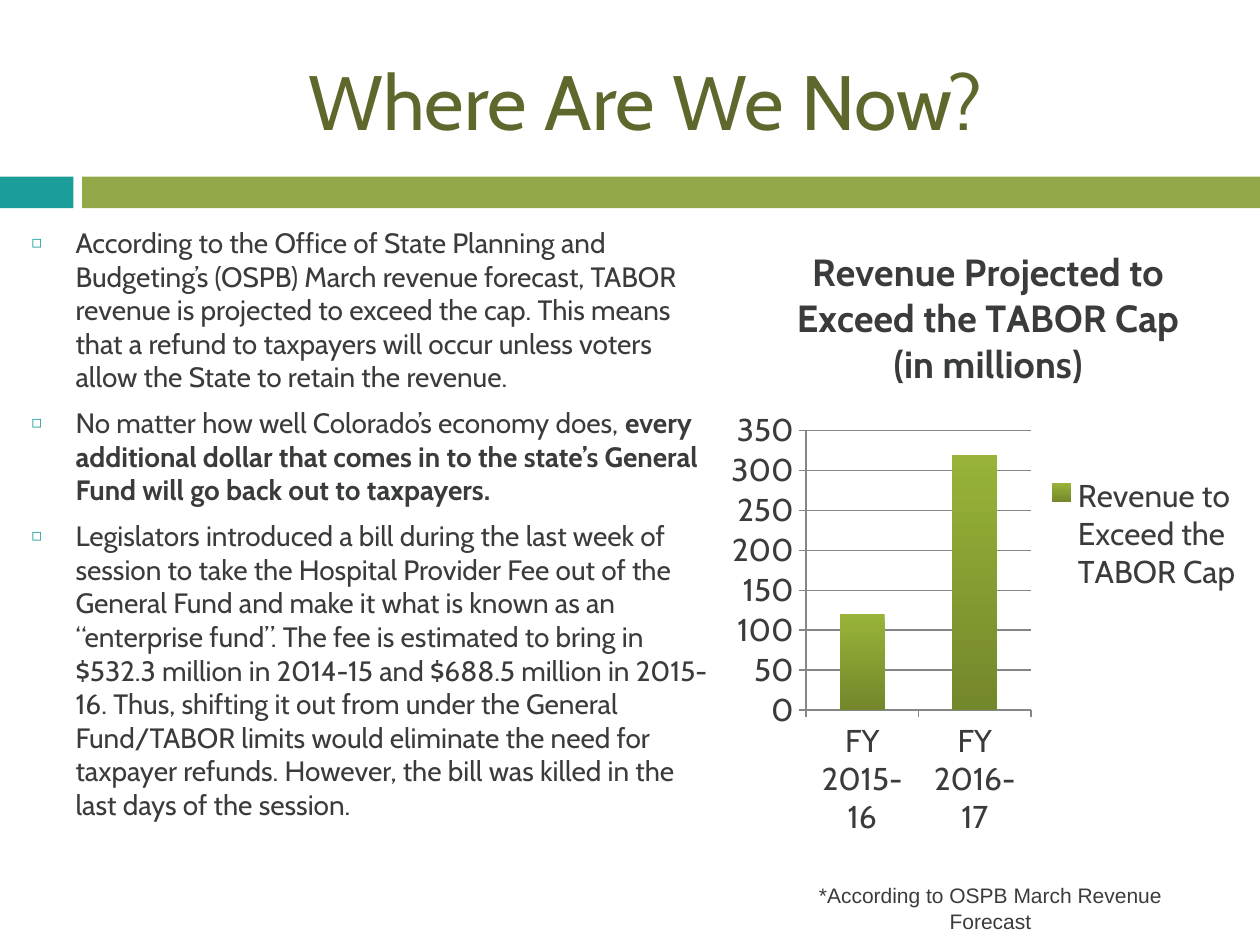
from lxml.etree import SubElement
from pptx import Presentation
from pptx.chart.data import CategoryChartData
from pptx.dml.color import RGBColor
from pptx.enum.chart import XL_CHART_TYPE as ChartType, XL_LEGEND_POSITION as LegendPosition
from pptx.enum.chart import XL_TICK_MARK as TickMark
from pptx.enum.shapes import MSO_SHAPE as ShapeType
from pptx.enum.text import MSO_ANCHOR as Anchor, MSO_AUTO_SIZE as AutoSize, PP_ALIGN as Align
from pptx.oxml.ns import qn
from pptx.util import Pt

TEAL, GREEN, OLIVE, TEXT, GRID = "1B9D9A", "93A849", "60672C", "3A3B3C", "868686"
BAR_TOP, BAR_BOTTOM = "98B338", "73872B"
TITLE = "Where Are We Now?"
BULLETS = [
    [("According to the Office of State Planning and Budgeting’s (OSPB) March revenue "
      "forecast, TABOR revenue is projected to exceed the cap. This means that a refund to "
      "taxpayers will occur unless voters allow the State to retain the revenue.", False)],
    [("No matter how well Colorado’s economy does, ", False),
     ("every additional dollar that comes in to the state’s General Fund will go back out "
      "to taxpayers.", True)],
    [("Legislators introduced a bill during the last week of session to take the Hospital "
      "Provider Fee out of the General Fund and make it what is known as an “enterprise "
      "fund”. The fee is estimated to bring in $532.3 million in 2014-15 and $688.5 million "
      "in 2015-16. Thus, shifting it out from under the General Fund/TABOR limits would "
      "eliminate the need for taxpayer refunds. However, the bill was killed in the last "
      "days of the session.", False)],
]
CHART_TITLE = "Revenue Projected to Exceed the TABOR Cap (in millions)"
SERIES_NAME = "Revenue to Exceed the TABOR Cap"
REVENUE = {"FY 2015-16": 120, "FY 2016-17": 320}
FOOTNOTE = "*According to OSPB March Revenue Forecast"
BANDS = [(0, 42, TEAL), (47, 673, GREEN)]
BAND_TOP, BAND_HEIGHT = 101, 18
CONTENT_TOP, CONTENT_HEIGHT = 125.3, 360


def color(hex_code):
    return RGBColor.from_string(hex_code)


def style(font, size, hex_code, name="Cabin", bold=False):
    font.size, font.name, font.bold = Pt(size), name, bold
    font.color.rgb = color(hex_code)


def place(shape, left, top, width, height):
    shape.left, shape.top, shape.width, shape.height = map(Pt, (left, top, width, height))


def add_bullet(paragraph):
    properties = paragraph._p.get_or_add_pPr()
    properties.set("marL", str(Pt(25.2)))
    properties.set("indent", str(-Pt(25.2)))
    bullet_color = SubElement(properties, qn("a:buClr"))
    SubElement(bullet_color, qn("a:srgbClr"), val=TEAL)
    SubElement(properties, qn("a:buSzPct"), val="60000")
    SubElement(properties, qn("a:buFont"), typeface="Arial")
    SubElement(properties, qn("a:buChar"), char="◻")


def add_bands(slide):
    for left, width, fill in BANDS:
        band = slide.shapes.add_shape(
            ShapeType.RECTANGLE, Pt(left), Pt(BAND_TOP), Pt(width), Pt(BAND_HEIGHT))
        band.shadow.inherit = False
        band.fill.solid()
        band.fill.fore_color.rgb = color(fill)
        band.line.fill.background()


def fill_title(title):
    place(title, 48, 18, 642, 78)
    title.text_frame.text = TITLE
    title.text_frame.auto_size = AutoSize.NONE
    title.text_frame.vertical_anchor = Anchor.MIDDLE
    paragraph = title.text_frame.paragraphs[0]
    paragraph.alignment = Align.CENTER
    style(paragraph.font, 44, OLIVE)


def fill_body(body):
    place(body, 10.8, CONTENT_TOP, 401, CONTENT_HEIGHT)
    frame = body.text_frame
    frame.auto_size = AutoSize.NONE
    for index, runs in enumerate(BULLETS):
        paragraph = frame.add_paragraph() if index else frame.paragraphs[0]
        paragraph.space_before = Pt(7)
        add_bullet(paragraph)
        style(paragraph.font, 16, TEXT)
        for text, bold in runs:
            run = paragraph.add_run()
            run.text = text
            run.font.bold = bold


def add_revenue_chart(slide):
    data = CategoryChartData()
    data.categories = list(REVENUE)
    data.add_series(SERIES_NAME, list(REVENUE.values()))
    chart = slide.shapes.add_chart(
        ChartType.COLUMN_CLUSTERED, Pt(411.8), Pt(CONTENT_TOP), Pt(306), Pt(CONTENT_HEIGHT),
        data).chart
    style(chart.font, 18, TEXT)
    chart.has_title = True
    chart.chart_title.include_in_layout = False
    chart.chart_title.text_frame.text = CHART_TITLE
    style(chart.chart_title.text_frame.paragraphs[0].font, 21.6, TEXT, bold=True)
    chart.has_legend = True
    chart.legend.position = LegendPosition.RIGHT
    chart.legend.include_in_layout = False
    for axis in (chart.category_axis, chart.value_axis):
        axis.major_tick_mark = TickMark.OUTSIDE
        axis.minor_tick_mark = TickMark.NONE
        axis.format.line.color.rgb = color(GRID)
    chart.value_axis.has_major_gridlines = True
    chart.value_axis.major_gridlines.format.line.color.rgb = color(GRID)
    plot = chart.plots[0]
    plot.gap_width, plot.vary_by_categories = 150, False
    fill = plot.series[0].format.fill
    fill.gradient()
    fill.gradient_angle = 270
    for stop, hex_code in zip(fill.gradient_stops, (BAR_TOP, BAR_BOTTOM)):
        stop.color.rgb = color(hex_code)


def add_footnote(slide):
    box = slide.shapes.add_textbox(Pt(457), Pt(501), Pt(218), Pt(36))
    frame = box.text_frame
    frame.word_wrap = True
    frame.auto_size = AutoSize.SHAPE_TO_FIT_TEXT
    frame.text = FOOTNOTE
    frame.paragraphs[0].alignment = Align.CENTER
    style(frame.paragraphs[0].font, 12, TEXT, "Arial")


def main():
    presentation = Presentation()
    presentation.slide_width, presentation.slide_height = Pt(720), Pt(540)
    slide = presentation.slides.add_slide(presentation.slide_layouts[1])
    add_bands(slide)
    fill_title(slide.shapes.title)
    fill_body(slide.placeholders[1])
    add_revenue_chart(slide)
    add_footnote(slide)
    presentation.save("out.pptx")


if __name__ == "__main__":
    main()
